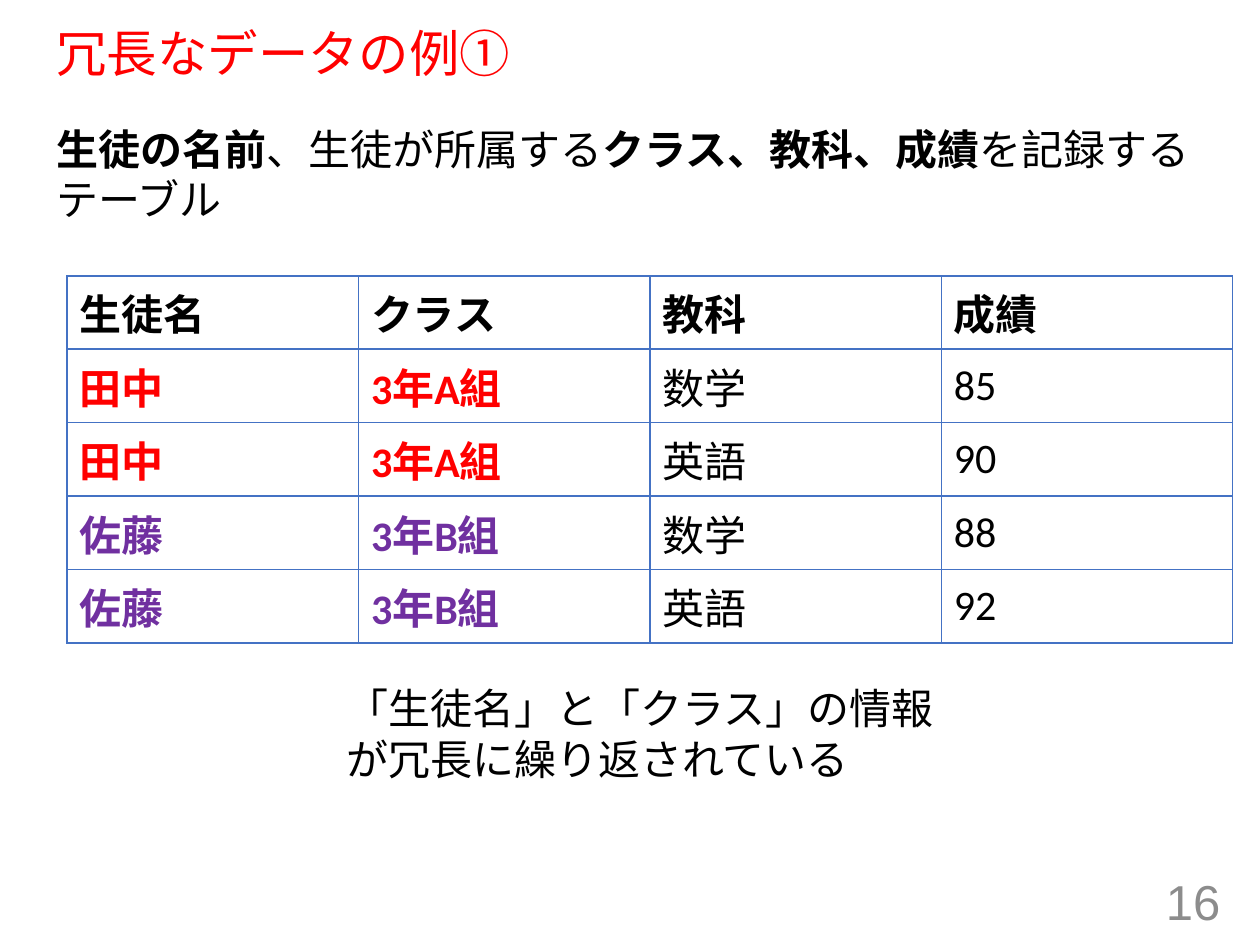
from dataclasses import dataclass

import pptx
import pptx.dml.color
import pptx.enum.text
import pptx.oxml
import pptx.oxml.ns
import pptx.util
from pptx.util import Cm, Pt

RGB = pptx.dml.color.RGBColor.from_string
ALIGN = pptx.enum.text.PP_ALIGN
ANCHOR = pptx.enum.text.MSO_ANCHOR


@dataclass(frozen=True)
class Theme:
    text: str = "000000"
    red: str = "FF0000"
    purple: str = "7030A0"
    grey: str = "8C8C8C"
    border: str = "4472C4"
    heading_font: str = "Arial"
    body_font: str = "Calibri"
    title_size: float = 28.8
    body_size: float = 24
    number_size: float = 28


theme = Theme()


def style(paragraph, font, size, color, bold=None):
    paragraph.font.name = font
    paragraph.font.size = Pt(size)
    paragraph.font.color.rgb = RGB(color)
    paragraph.font.bold = bold


def add_text(left, top, width, height, runs, font, size, color, anchor=ANCHOR.TOP):
    """Add a wrapping text box from (text, bold) runs and return its paragraph."""
    box = slide.shapes.add_textbox(Cm(left), Cm(top), Cm(width), Cm(height))
    box.text_frame.word_wrap = True
    box.text_frame.vertical_anchor = anchor
    paragraph = box.text_frame.paragraphs[0]
    style(paragraph, font, size, color)
    for text, bold in runs:
        run = paragraph.add_run()
        run.text = text
        run.font.bold = bold
    return paragraph


presentation = pptx.Presentation()
presentation.slide_width, presentation.slide_height = Cm(25.4), Cm(19.05)
slide = presentation.slides.add_slide(presentation.slide_layouts[6])

title = add_text(0.89, 0.48, 23.5, 1.3, [("冗長なデータの例①", False)],
                 theme.heading_font, theme.title_size, theme.red, ANCHOR.MIDDLE)
title.line_spacing = 0.9

description = [
    ("生徒の名前", True),
    ("、生徒が所属する", False),
    ("クラス、教科、成績", True),
    ("を記録するテーブル", False),
]
add_text(0.89, 2.36, 23.5, 2.87, description,
         theme.heading_font, theme.body_size, theme.text)

page_number = add_text(19.13, 17.65, 5.72, 1.02, [("16", False)],
                       theme.heading_font, theme.number_size, theme.grey, ANCHOR.MIDDLE)
page_number.alignment = ALIGN.RIGHT

# Grade table: repeated student and class values share a colour
header = ("生徒名", "クラス", "教科", "成績")
grades = [
    ("田中", "3年A組", "数学", "85"),
    ("田中", "3年A組", "英語", "90"),
    ("佐藤", "3年B組", "数学", "88"),
    ("佐藤", "3年B組", "英語", "92"),
]
student_colors = {"田中": theme.red, "佐藤": theme.purple}
rows = [header, *grades]
row_height = 1.48
table = slide.shapes.add_table(len(rows), len(header), Cm(1.35), Cm(5.56),
                               Cm(23.5), Cm(row_height * len(rows))).table
table.horz_banding = False
for row_index, row in enumerate(rows):
    for column_index, value in enumerate(row):
        cell = table.cell(row_index, column_index)
        cell.text = value
        cell.vertical_anchor = ANCHOR.MIDDLE
        repeated = row_index > 0 and column_index < 2
        color = student_colors[row[0]] if repeated else theme.text
        style(cell.text_frame.paragraphs[0], theme.body_font, theme.body_size,
              color, bold=row_index == 0 or repeated)
        properties = cell._tc.get_or_add_tcPr()
        for side in ("lnL", "lnR", "lnT", "lnB"):
            properties.append(pptx.oxml.parse_xml(
                f'<a:{side} {pptx.oxml.ns.nsdecls("a")} w="{Pt(1)}"><a:solidFill>'
                f'<a:srgbClr val="{theme.border}"/></a:solidFill></a:{side}>'))
        cell.fill.background()

add_text(6.73, 13.64, 12.7, 2.31,
         [("「生徒名」と「クラス」の情報が冗長に繰り返されている", False)],
         theme.body_font, theme.body_size, theme.text)

presentation.save("out.pptx")
